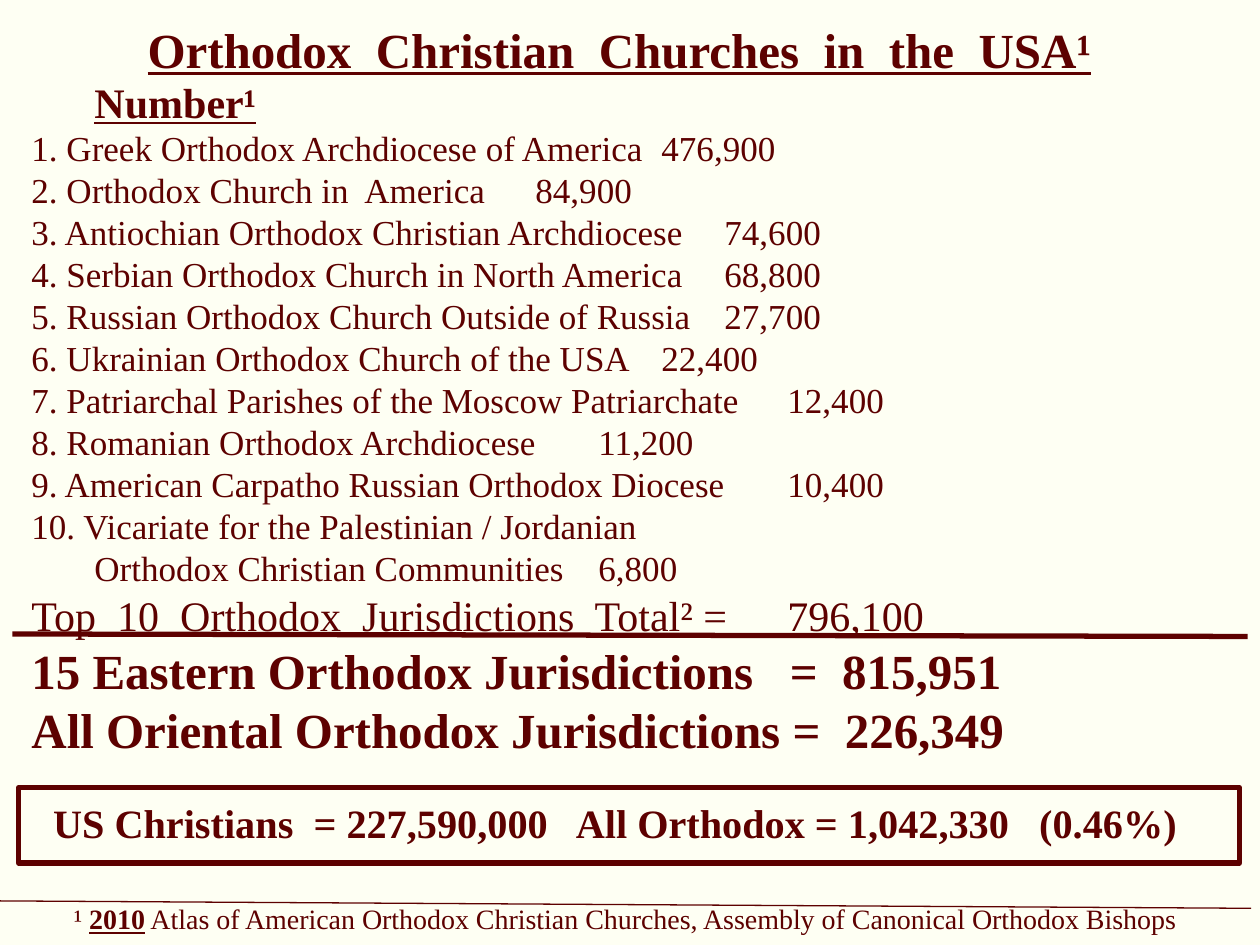
import pptx
import pptx.dml.color
import pptx.enum.shapes
import pptx.enum.text
import pptx.oxml.ns
import pptx.util
import lxml.etree

Cm = pptx.util.Cm
Pt = pptx.util.Pt
qn = pptx.oxml.ns.qn

theme = {
    "ink": pptx.dml.color.RGBColor.from_string("5D0100"),
    "paper": pptx.dml.color.RGBColor.from_string("FEFFF3"),
    "font": "Times New Roman",
    "headline": 28,
    "heading": 24,
    "summary": 23,
    "row": 20,
    "note": 16,
    "leading": 1.2,
    "thick": Pt(3),
    "thin": Pt(0.75),
}


def write_para(para, pieces, size, tabs=()):
    layout = {"alignment": pptx.enum.text.PP_ALIGN.LEFT, "space_before": Pt(0),
              "space_after": Pt(0), "line_spacing": Pt(round(size * theme["leading"]))}
    for name, value in layout.items():
        setattr(para, name, value)
    properties = para._p.get_or_add_pPr()
    properties.set("marL", "0")
    properties.set("indent", "0")
    lxml.etree.SubElement(properties, qn("a:buNone"))
    if tabs:
        stops = lxml.etree.SubElement(properties, qn("a:tabLst"))
        for position, side in tabs:
            lxml.etree.SubElement(stops, qn("a:tab"), pos=str(Cm(position)), algn=side)
    for text, bold, underline in pieces:
        span = para.add_run()
        span.text = text
        face = {"name": theme["font"], "size": Pt(size), "bold": bold, "underline": underline}
        for name, value in face.items():
            setattr(span.font, name, value)
        span.font.color.rgb = theme["ink"]


def prepare_box(box, left, top, width, height):
    place = {"left": left, "top": top, "width": width, "height": height}
    for name, value in place.items():
        setattr(box, name, Cm(value))
    frame = {"word_wrap": True, "auto_size": pptx.enum.text.MSO_AUTO_SIZE.NONE,
             "vertical_anchor": pptx.enum.text.MSO_ANCHOR.TOP}
    for name, value in frame.items():
        setattr(box.text_frame, name, value)
    return box.text_frame


deck = pptx.Presentation()
deck.slide_width = Cm(25.4)
deck.slide_height = Cm(19.05)
page = deck.slides.add_slide(deck.slide_layouts[1])
page.background.fill.solid()
page.background.fill.fore_color.rgb = theme["paper"]

title = prepare_box(page.shapes.title, 2.72, 0.25, 20, 1.5)
write_para(title.paragraphs[0],
           [("Orthodox  Christian  Churches  in  the  USA¹", True, True)], theme["headline"])

number_tab = [(17.17, "r")]
churches = [
    ("1. Greek Orthodox Archdiocese of America\t476,900", number_tab),
    ("2. Orthodox Church in  America\t84,900", number_tab),
    ("3. Antiochian Orthodox Christian Archdiocese\t74,600", number_tab),
    ("4. Serbian Orthodox Church in North America\t68,800", number_tab),
    ("5. Russian Orthodox Church Outside of Russia\t27,700", number_tab),
    ("6. Ukrainian Orthodox Church of the USA\t22,400", number_tab),
    ("7. Patriarchal Parishes of the Moscow Patriarchate\t12,400", number_tab),
    ("8. Romanian Orthodox Archdiocese\t11,200", number_tab),
    ("9. American Carpatho Russian Orthodox Diocese\t10,400", number_tab),
    ("10. Vicariate for the Palestinian / Jordanian", ()),
    ("\tOrthodox Christian Communities\t6,800", [(2.54, "l")] + number_tab),
]
lines = [([("\t", True, False), ("Number¹", True, True)], theme["heading"], [(17.83, "r")])]
lines += [([(text, False, False)], theme["row"], tabs) for text, tabs in churches]
lines += [
    ([("Top  10  Orthodox  Jurisdictions  Total² =\t796,100", False, False)],
     theme["heading"], [(15.24, "l")]),
    ([("15 Eastern Orthodox Jurisdictions   =  815,951", True, False)], theme["headline"], ()),
    ([("All Oriental Orthodox Jurisdictions =  226,349", True, False)], theme["headline"], ()),
]
body = prepare_box(page.placeholders[1], 0.38, 1.4, 24.64, 14.3)
for index, (pieces, size, tabs) in enumerate(lines):
    para = body.add_paragraph() if index else body.paragraphs[0]
    write_para(para, pieces, size, tabs)

summary = page.shapes.add_shape(pptx.enum.shapes.MSO_SHAPE.RECTANGLE, 0, 0, 0, 0)
summary.shadow.inherit = False
summary.fill.background()
summary.line.color.rgb = theme["ink"]
summary.line.width = theme["thick"]
summary_text = prepare_box(summary, 0.38, 15.88, 24.61, 1.52)
summary_text.margin_left = Cm(0.69)
summary_text.margin_top = Cm(0.2)
write_para(summary_text.paragraphs[0],
           [("US Christians  = 227,590,000   All Orthodox = 1,042,330   (0.46%)", True, False)],
           theme["summary"])

rules = [
    (0.25, 12.78, 25.15, 12.83, theme["thick"]),
    (-0.13, 18.16, 25.22, 18.31, theme["thin"]),
]
for left, top, right, bottom, width in rules:
    rule = page.shapes.add_connector(pptx.enum.shapes.MSO_CONNECTOR.STRAIGHT,
                                     Cm(left), Cm(top), Cm(right), Cm(bottom))
    rule.line.color.rgb = theme["ink"]
    rule.line.width = width
    lxml.etree.SubElement(rule._element.spPr, qn("a:effectLst"))

note = prepare_box(page.shapes.add_textbox(0, 0, 0, 0), 1.24, 18.06, 23.6, 0.95)
write_para(note.paragraphs[0], [
    ("¹ ", False, False),
    ("2010", True, True),
    (" Atlas of American Orthodox Christian Churches, Assembly of Canonical Orthodox Bishops",
     False, False),
], theme["note"])

deck.save("out.pptx")
